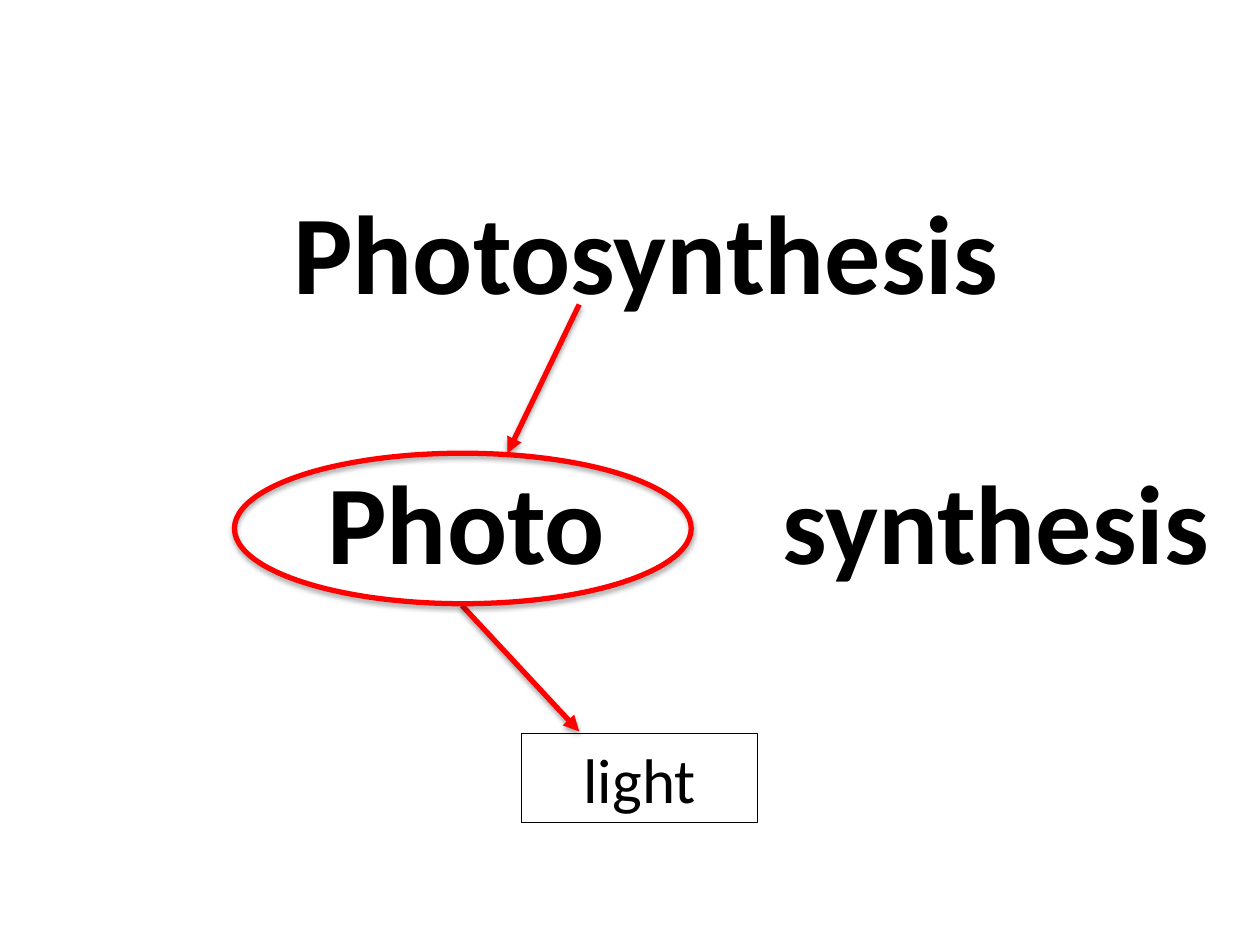
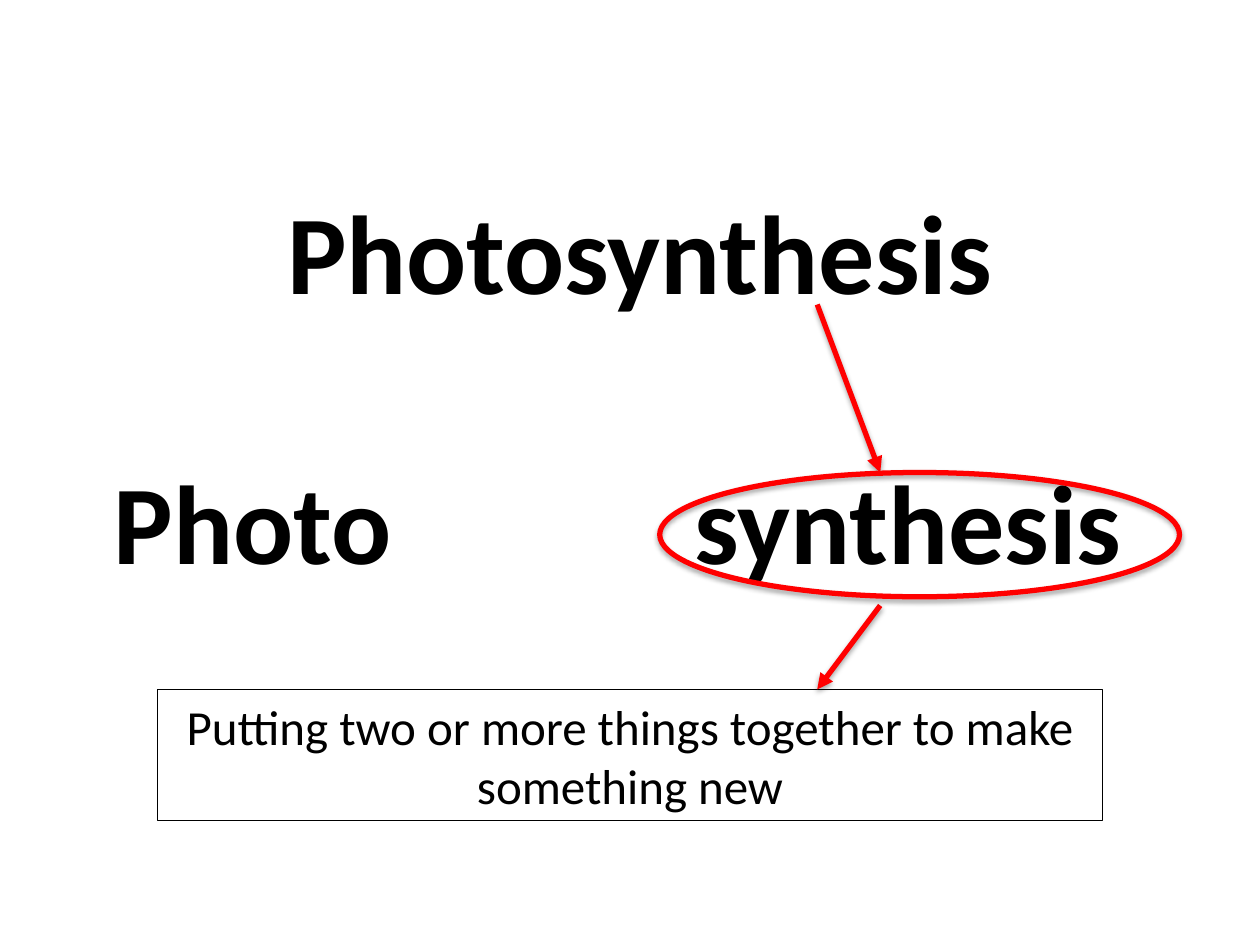
from lxml import etree
from pptx import Presentation
from pptx.dml.color import RGBColor
from pptx.enum import shapes, text
from pptx.oxml import ns
from pptx.util import Pt

BLACK, RED = "000000", "FF0000"
TITLE_TOP, PARTS_TOP = 101, 255
WORD_WIDTHS = {"Photosynthesis": 420, "Photo": 180, "synthesis": 270}


def color(hex_code):
    return RGBColor.from_string(hex_code)


def add_element(parent, tag, **attributes):
    return etree.SubElement(parent, ns.qn(tag), attributes)


class WordSlides:
    """Holds the shared style and the slide being drawn."""

    font_name = "Calibri"
    word_size = 64
    mark_width = 3

    def __init__(self):
        self.presentation = Presentation()
        self.presentation.slide_width = Pt(720)
        self.presentation.slide_height = Pt(540)
        self.slide = None

    def new_slide(self):
        blank_layout = self.presentation.slide_layouts[6]
        self.slide = self.presentation.slides.add_slide(blank_layout)

    def set_text(self, shape, words, size, bold=False):
        frame = shape.text_frame
        frame.text = words
        frame.word_wrap = True
        paragraph = frame.paragraphs[0]
        paragraph.alignment = text.PP_ALIGN.CENTER
        font = paragraph.runs[0].font
        font.name, font.size, font.bold = self.font_name, Pt(size), bold
        font.color.rgb = color(BLACK)

    def word(self, word, center, top):
        width = WORD_WIDTHS[word]
        box = self.slide.shapes.add_textbox(
            Pt(center - width / 2), Pt(top), Pt(width), Pt(85))
        self.set_text(box, word, self.word_size, bold=True)

    def split_word(self, title_center, photo_center, synthesis_center):
        """Puts the whole word above its two parts."""
        self.word("Photosynthesis", title_center, TITLE_TOP)
        self.word("Photo", photo_center, PARTS_TOP)
        self.word("synthesis", synthesis_center, PARTS_TOP)

    def outline(self, kind, bounds, line_color, line_width):
        shape = self.slide.shapes.add_shape(kind, *map(Pt, bounds))
        shape.shadow.inherit = False
        shape.fill.background()
        shape.line.color.rgb = color(line_color)
        shape.line.width = Pt(line_width)
        return shape

    def meaning(self, bounds, words, size):
        box = self.outline(shapes.MSO_SHAPE.RECTANGLE, bounds, BLACK, 0.75)
        self.set_text(box, words, size)

    def ring(self, *bounds):
        ellipse = self.outline(shapes.MSO_SHAPE.OVAL, bounds, RED, self.mark_width)
        effects = ellipse.element.spPr.find(ns.qn("a:effectLst"))
        self.drop_shadow(effects, distance=1.8, opacity=35)

    def arrow(self, start, end):
        connector = self.slide.shapes.add_connector(
            shapes.MSO_CONNECTOR.STRAIGHT, *map(Pt, start + end))
        connector.line.color.rgb = color(RED)
        connector.line.width = Pt(self.mark_width)
        properties = connector.element.spPr
        add_element(properties.find(ns.qn("a:ln")), "a:tailEnd", type="triangle")
        effects = add_element(properties, "a:effectLst")
        self.drop_shadow(effects, distance=1.6, opacity=37)

    def drop_shadow(self, effects, distance, opacity):
        shadow = add_element(
            effects, "a:outerShdw", blurRad=str(Pt(3.1)), dist=str(Pt(distance)),
            dir="5400000", rotWithShape="0")
        shade = add_element(shadow, "a:srgbClr", val=BLACK)
        add_element(shade, "a:alpha", val=str(opacity * 1000))


def photo_slide(deck):
    deck.new_slide()
    deck.split_word(369, 266.5, 569)
    deck.arrow((331, 174), (290, 259))
    deck.arrow((264, 346), (331, 418))
    deck.ring(134, 259, 261, 86)
    deck.meaning((298, 419, 135, 51), "light", 36)


def synthesis_slide(deck):
    deck.new_slide()
    deck.split_word(365.5, 144.5, 519)
    deck.arrow((467, 174), (503, 270))
    deck.meaning((90, 394, 540, 75),
                 "Putting two or more things together to make something new", 28)
    deck.arrow((503, 346), (467, 394))
    deck.ring(377, 270, 297, 71)


def main():
    deck = WordSlides()
    photo_slide(deck)
    synthesis_slide(deck)
    deck.presentation.save("out.pptx")


if __name__ == "__main__":
    main()
